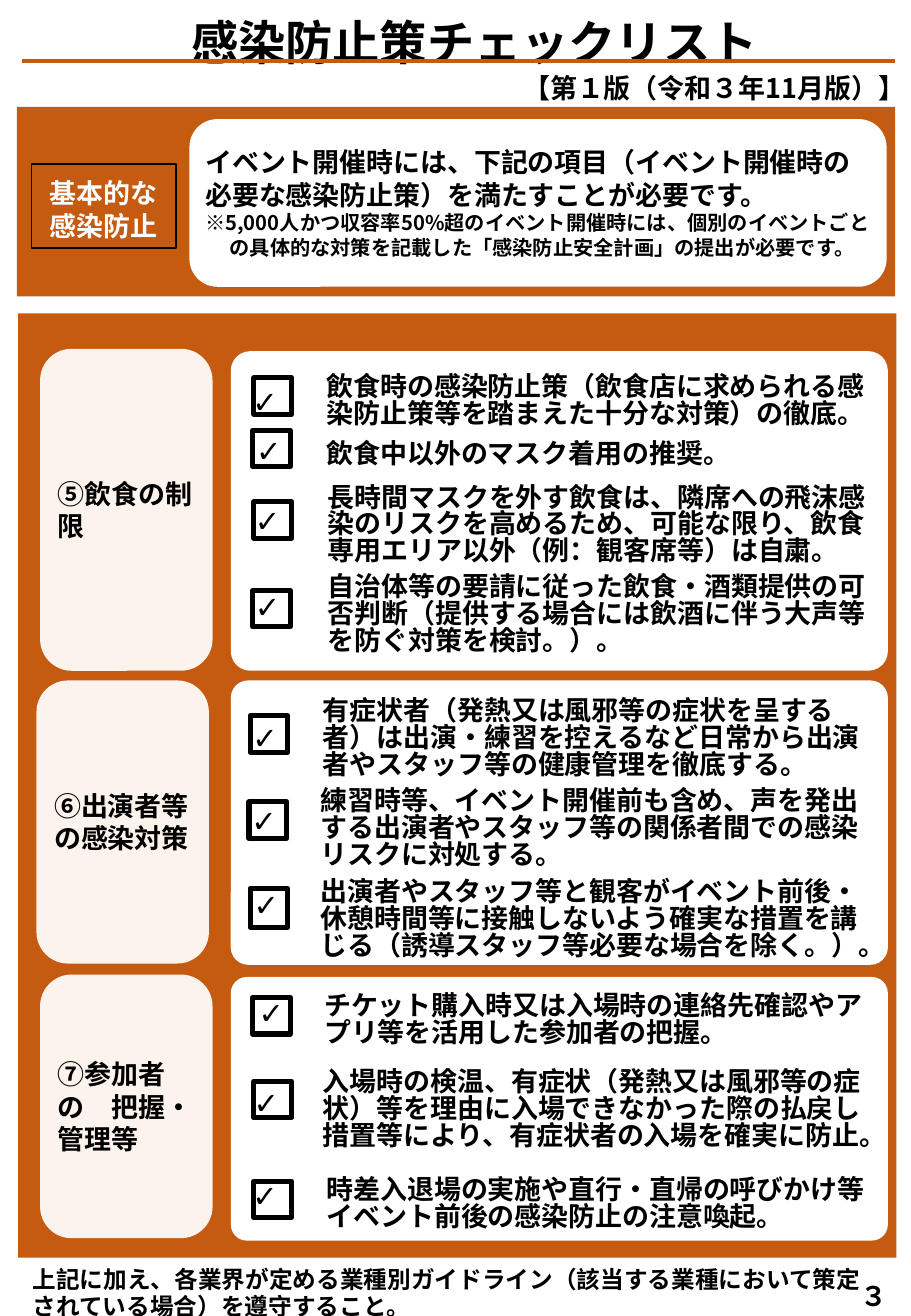
"""Build the event infection-control checklist slide."""
from dataclasses import dataclass, field
from typing import Any

from pptx import Presentation
from pptx.dml.color import RGBColor
from pptx.enum.shapes import MSO_CONNECTOR, MSO_SHAPE
from pptx.enum.text import MSO_ANCHOR, MSO_AUTO_SIZE, PP_ALIGN
from pptx.oxml.ns import qn
from pptx.util import Inches, Length, Pt

RECT, ROUNDED = MSO_SHAPE.RECTANGLE, MSO_SHAPE.ROUNDED_RECTANGLE
STRAIGHT = MSO_CONNECTOR.STRAIGHT
TOP, MIDDLE, BOTTOM = MSO_ANCHOR.TOP, MSO_ANCHOR.MIDDLE, MSO_ANCHOR.BOTTOM
LEFT, CENTER = PP_ALIGN.LEFT, PP_ALIGN.CENTER
GROW, FIXED = MSO_AUTO_SIZE.SHAPE_TO_FIT_TEXT, MSO_AUTO_SIZE.NONE

COLUMNS, ROWS = 75, 108.3
CELL = 0.1
ORANGE, CREAM, WHITE, BLACK = "C55A11", "FDF3ED", "FFFFFF", "000000"
JAPANESE, LATIN = "Noto Sans CJK JP", "Calibri"
PANEL_LEFT, PANEL_WIDTH, LABEL_WIDTH = 19, 54.1, 14.2
ITEM_WIDTH, BOX_WIDTH, TICK_WIDTH, TICK_HEIGHT = 46.8, 3.1, 5.1, 4
LABEL_INSETS = {"margin_left": Inches(0.07), "margin_right": Inches(0.07),
                "margin_top": Inches(0.04), "margin_bottom": Inches(0.04)}
BADGE_INSETS = {"margin_left": Inches(0.15), "margin_top": Inches(0.1)}


@dataclass(frozen=True)
class Area:
    """A place on the grid, in columns and rows."""
    left: float
    top: float
    width: float
    height: float

    def lengths(self) -> list[Length]:
        """Return left, top, width and height as lengths."""
        return [cells(n) for n in (self.left, self.top, self.width, self.height)]


@dataclass(frozen=True)
class Style:
    """How a text is set."""
    size: float = 16
    color: str = BLACK
    font: str = JAPANESE
    bold: bool = True
    anchor: Any = TOP
    align: Any = LEFT
    fit: Any = GROW
    spacing: Any = None
    insets: dict[str, Length] = field(default_factory=dict)


@dataclass(frozen=True)
class Item:
    """A checklist line: its text, its box and its tick."""
    text: str
    left: float
    top: float
    height: float
    box: tuple[float, float]
    tick: tuple[float, float]
    box_height: float = 3


@dataclass(frozen=True)
class Section:
    """A labelled panel of checklist items."""
    label: str
    label_left: float
    label_top: float
    label_height: float
    top: float
    height: float
    items: tuple[Item, ...]


ITEM_STYLE = Style(anchor=BOTTOM, spacing=Pt(16))
TICK_STYLE = Style(size=18, font=LATIN, bold=False)
LABEL_STYLE = Style(anchor=MIDDLE, fit=FIXED, insets=LABEL_INSETS)

SECTIONS = (
    Section("⑤飲食の制限", 3.3, 28.7, 26.5, 28.9, 26.3, (
        Item("飲食時の感染防止策（飲食店に求められる感染防止策等を踏まえた十分な対策）の徹底。",
             25.9, 30.3, 5.5, (20.9, 31.1), (19.8, 31)),
        Item("飲食中以外のマスク着用の推奨。",
             25.9, 35.7, 3.4, (20.8, 35.4), (20.1, 35.1)),
        Item("長時間マスクを外す飲食は、隣席への飛沫感染のリスクを高めるため、可能な限り、"
             "飲食専用エリア以外（例：観客席等）は自粛。",
             26, 39.2, 7.9, (20.9, 41.3), (20, 40.8)),
        Item("自治体等の要請に従った飲食・酒類提供の可否判断"
             "（提供する場合には飲酒に伴う大声等を防ぐ対策を検討。）。",
             26, 46.6, 7.9, (20.8, 48.6), (20, 47.9)))),
    Section("⑥出演者等の感染対策", 3, 56, 23.3, 56, 23.4, (
        Item("有症状者（発熱又は風邪等の症状を呈する者）は出演・練習を控えるなど"
             "日常から出演者やスタッフ等の健康管理を徹底する。",
             25.6, 56.8, 7.9, (20.6, 58.9), (19.8, 58.7)),
        Item("練習時等、イベント開催前も含め、声を発出する出演者やスタッフ等の"
             "関係者間での感染リスクに対処する。",
             25.4, 64.2, 7.9, (20.5, 66), (19.7, 65.5)),
        Item("出演者やスタッフ等と観客がイベント前後・休憩時間等に接触しないよう"
             "確実な措置を講じる（誘導スタッフ等必要な場合を除く。）。",
             25.4, 71.7, 7.9, (20.6, 73.1), (19.9, 72.4), 3.2))),
    Section("⑦参加者の　把握・管理等", 3.3, 80.2, 21.7, 80.4, 21.7, (
        Item("チケット購入時又は入場時の連絡先確認やアプリ等を活用した参加者の把握。",
             25.7, 81.1, 5.6, (20.8, 82.1), (20.3, 81.3)),
        Item("入場時の検温、有症状（発熱又は風邪等の症状）等を理由に入場できなかった際の"
             "払戻し措置等により、有症状者の入場を確実に防止。",
             25.6, 87.5, 7.7, (20.9, 89), (19.9, 88.7)),
        Item("時差入退場の実施や直行・直帰の呼びかけ等イベント前後の感染防止の注意喚起。",
             25.9, 96.4, 5.5, (20.9, 97.2), (19.8, 96.4)))),
)


def cells(count: float) -> Length:
    """Turn a number of grid cells into a length."""
    return Inches(count * CELL)


def rgb(color: str) -> RGBColor:
    """Turn a hex string into a colour."""
    return RGBColor.from_string(color)


def apply(target: Any, values: dict[str, Any]) -> None:
    """Set each named attribute of the target."""
    for name, value in values.items():
        setattr(target, name, value)


def write(shape: Any, texts: list[str], style: Style) -> None:
    """Fill a shape with one paragraph per text."""
    frame = shape.text_frame
    frame.text = "\n".join(texts)
    apply(frame, {"word_wrap": True, "vertical_anchor": style.anchor,
                  "auto_size": style.fit, **style.insets})
    for paragraph in frame.paragraphs:
        apply(paragraph, {"alignment": style.align, "space_before": Pt(0),
                          "line_spacing": style.spacing})
        for run in paragraph.runs:
            apply(run.font, {"size": Pt(style.size), "bold": style.bold, "name": style.font})
            run.font.color.rgb = rgb(style.color)
            east_asian = run.font._element.makeelement(qn("a:ea"), {"typeface": style.font})
            run.font._element.find(qn("a:latin")).addnext(east_asian)


def add_text(slide: Any, text: str, area: Area, style: Style) -> None:
    """Add a text box."""
    write(slide.shapes.add_textbox(*area.lengths()), [text], style)


def add_block(slide: Any, kind: Any, area: Area, fill: str = "", line: float = 0,
              corner: float | None = None) -> Any:
    """Add a filled or outlined shape."""
    block = slide.shapes.add_shape(kind, *area.lengths())
    block.shadow.inherit = False
    if fill:
        block.fill.solid()
        block.fill.fore_color.rgb = rgb(fill)
    else:
        block.fill.background()
    if line:
        block.line.color.rgb = rgb(BLACK)
        block.line.width = Pt(line)
    else:
        block.line.fill.background()
    if corner is not None:
        block.adjustments[0] = corner
    return block


def add_heading(slide: Any) -> None:
    """Add the title, its rule and the edition."""
    title = slide.shapes.title
    apply(title, dict(zip(("left", "top", "width", "height"),
                          Area(-2.3, 0.6, 82.7, 5.7).lengths())))
    write(title, ["感染防止策チェックリスト"], Style(size=28, align=CENTER))
    rule = slide.shapes.add_connector(STRAIGHT, cells(1.8), cells(5), cells(73.7), cells(5))
    rule.line.color.rgb = rgb(ORANGE)
    rule.line.width = Pt(2.25)
    properties = rule._element.spPr
    properties.append(properties.makeelement(qn("a:effectLst"), {}))
    add_text(slide, "【第１版（令和３年11月版）】", Area(41.3, 5.4, 35, 3.7), Style(align=CENTER))


def add_basics(slide: Any) -> None:
    """Add the band that states the basic requirement."""
    add_block(slide, RECT, Area(1.4, 8.8, 72.3, 15.6), ORANGE)
    add_block(slide, ROUNDED, Area(15.6, 9.8, 57.4, 13.8), WHITE)
    badge = add_block(slide, RECT, Area(2.6, 13.5, 11.9, 6.9), line=1)
    write(badge, ["基本的な", "感染防止"],
          Style(color=WHITE, anchor=MIDDLE, insets=BADGE_INSETS))
    notice = slide.placeholders[1]
    apply(notice, dict(zip(("left", "top", "width", "height"),
                           Area(15.9, 11.5, 56.8, 10.7).lengths())))
    write(notice, [
        "イベント開催時には、下記の項目（イベント開催時の必要な感染防止策）を満たすことが必要です。",
        "※5,000人かつ収容率50%超のイベント開催時には、個別のイベントごとの具体的な対策を"
        "記載した「感染防止安全計画」の提出が必要です。"], Style(fit=FIXED))
    requirement, remark = notice.text_frame.paragraphs
    remark.runs[0].font.size = Pt(12)
    for paragraph, hanging in ((requirement, 0), (remark, 2)):
        properties = paragraph._p.get_or_add_pPr()
        properties.set("marL", str(cells(hanging)))
        properties.set("indent", str(-cells(hanging)))
        properties.append(properties.makeelement(qn("a:buNone"), {}))
    slide.shapes._spTree.append(notice._element)


def add_section(slide: Any, section: Section) -> None:
    """Add a panel with its label and ticked items."""
    add_block(slide, ROUNDED, Area(PANEL_LEFT, section.top, PANEL_WIDTH, section.height),
              WHITE, corner=0.061)
    label = add_block(slide, ROUNDED, Area(section.label_left, section.label_top, LABEL_WIDTH,
                                           section.label_height), CREAM, corner=0.183)
    write(label, [section.label], LABEL_STYLE)
    for item in section.items:
        add_block(slide, RECT, Area(*item.box, BOX_WIDTH, item.box_height), line=3)
        add_text(slide, item.text, Area(item.left, item.top, ITEM_WIDTH, item.height), ITEM_STYLE)
        add_text(slide, "✓", Area(*item.tick, TICK_WIDTH, TICK_HEIGHT), TICK_STYLE)


def main() -> None:
    """Build and save the slide."""
    deck = Presentation()
    apply(deck, {"slide_width": cells(COLUMNS), "slide_height": cells(ROWS)})
    slide = deck.slides.add_slide(deck.slide_layouts[1])
    add_block(slide, RECT, Area(1.5, 25.8, 72.3, 77.7), ORANGE)
    add_basics(slide)
    add_heading(slide)
    for section in SECTIONS:
        add_section(slide, section)
    add_text(slide, "３", Area(69, 104.8, 5.9, 3.7), Style(anchor=MIDDLE, align=CENTER))
    add_text(slide, "上記に加え、各業界が定める業種別ガイドライン（該当する業種において"
             "策定されている場合）を遵守すること。", Area(1.7, 103.7, 70.7, 5.5),
             Style(size=14, anchor=MIDDLE, spacing=Pt(16)))
    deck.save("out.pptx")


if __name__ == "__main__":
    main()
